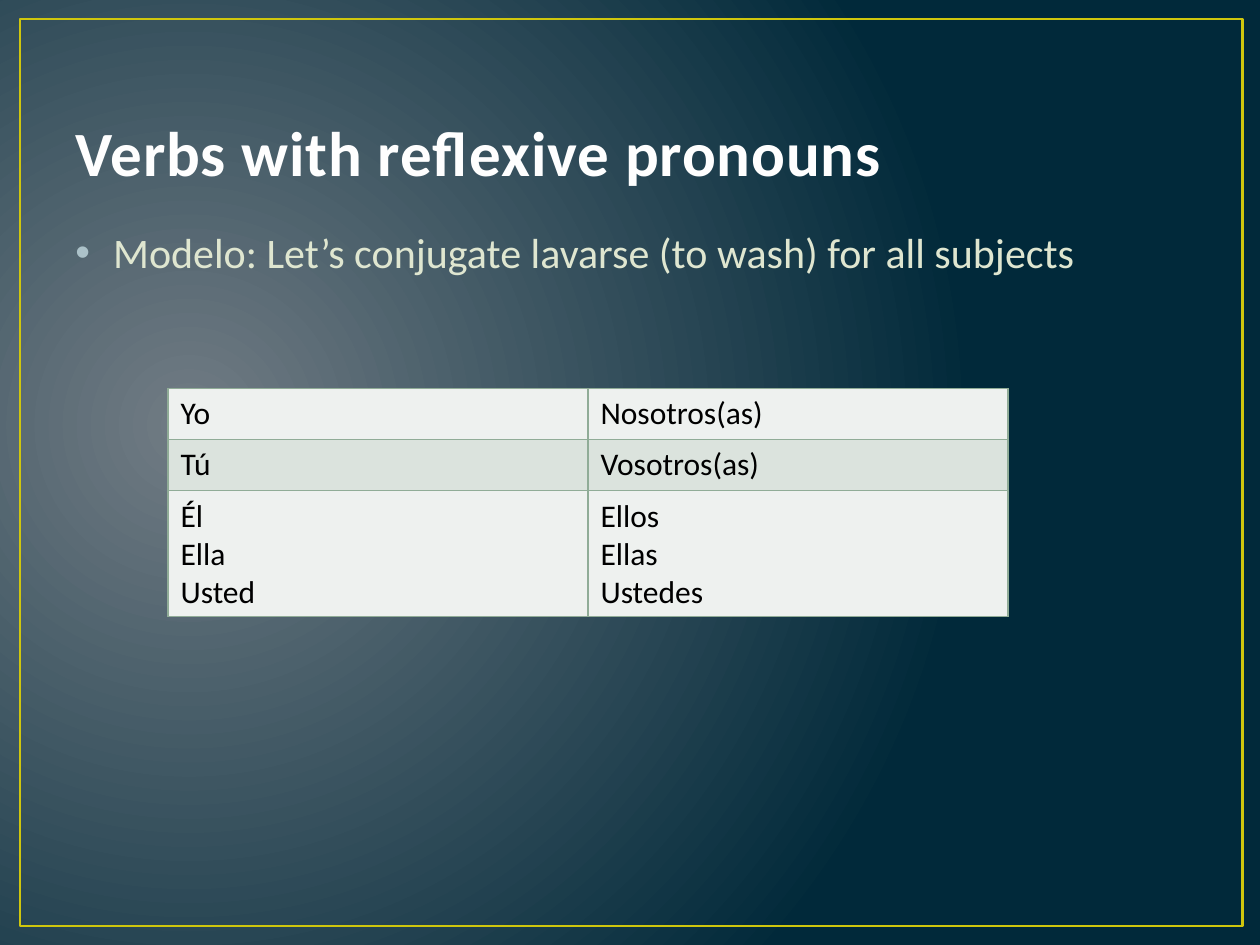
"""Build a Spanish grammar slide with a table of subject pronouns."""
from lxml.etree import SubElement
from pptx import Presentation
from pptx.dml.color import RGBColor
from pptx.enum.shapes import MSO_SHAPE
from pptx.enum.text import MSO_ANCHOR, PP_ALIGN
from pptx.oxml.ns import qn
from pptx.util import Pt


def color(value):
    return RGBColor.from_string(value)


def set_font(paragraph, size, value, bold=False):
    font = paragraph.font
    font.name, font.size, font.bold = "Calibri", Pt(size), bold
    font.color.rgb = color(value)


presentation = Presentation()
presentation.slide_width, presentation.slide_height = Pt(720), Pt(540)
slide = presentation.slides.add_slide(presentation.slide_layouts[5])

background = slide.background.fill
background.gradient()
for stop, value in zip(background.gradient_stops, ("717C84", "01293A")):
    stop.color.rgb = color(value)
gradient = slide.background._cSld.find(".//" + qn("a:gradFill"))
gradient.remove(gradient.find(qn("a:lin")))
circle = SubElement(gradient, qn("a:path"), path="circle")
SubElement(circle, qn("a:fillToRect"), l="15000", t="50000", r="85000", b="60000")

frame = slide.shapes.add_shape(MSO_SHAPE.RECTANGLE, Pt(11.5), Pt(10.8), Pt(698.5), Pt(518.4))
frame.shadow.inherit = False
frame.fill.background()
frame.line.color.rgb = color("CFC60D")
frame.line.width = Pt(1.5)

title = slide.shapes.title
title.left, title.top, title.width, title.height = Pt(36), Pt(21.6), Pt(648), Pt(90)
title.text_frame.text = "Verbs with reflexive pronouns"
title.text_frame.vertical_anchor = MSO_ANCHOR.BOTTOM
heading = title.text_frame.paragraphs[0]
heading.alignment = PP_ALIGN.LEFT
set_font(heading, 36, "FEFEFE", bold=True)
heading.runs[0].font._element.set("spc", "50")

body = slide.shapes.add_textbox(Pt(36), Pt(126), Pt(648), Pt(356.4))
body.text_frame.word_wrap = True
model = body.text_frame.paragraphs[0]
model.text = "Modelo: Let’s conjugate lavarse (to wash) for all subjects"
model.space_before = Pt(4.8)
set_font(model, 24, "DFE6D0")
properties = model._p.get_or_add_pPr()
properties.set("marL", str(Pt(21.6)))
properties.set("indent", str(Pt(-21.6)))
bullet_color = SubElement(properties, qn("a:buClr"))
SubElement(bullet_color, qn("a:srgbClr"), val="ACC2C9")
SubElement(properties, qn("a:buFont"), typeface="Arial")
SubElement(properties, qn("a:buChar"), char="•")
properties.append(properties.find(qn("a:defRPr")))

pronouns = [
    ("Yo", "Nosotros(as)"),
    ("Tú", "Vosotros(as)"),
    ("Él\nElla\nUsted", "Ellos\nEllas\nUstedes"),
]
row_heights = (29.2, 29.2, 72)
table = slide.shapes.add_table(3, 2, Pt(96), Pt(222), Pt(480), Pt(sum(row_heights))).table
table.first_row = False
for row_index, (texts, height) in enumerate(zip(pronouns, row_heights)):
    table.rows[row_index].height = Pt(height)
    for column_index, text in enumerate(texts):
        cell = table.cell(row_index, column_index)
        cell.text = text
        for paragraph in cell.text_frame.paragraphs:
            set_font(paragraph, 18, "000000")
        cell_properties = cell._tc.get_or_add_tcPr()
        for side in ("a:lnL", "a:lnR", "a:lnT", "a:lnB"):
            border = SubElement(cell_properties, qn(side), w=str(Pt(1)))
            border_fill = SubElement(border, qn("a:solidFill"))
            SubElement(border_fill, qn("a:srgbClr"), val="90AC97")
        cell.fill.solid()
        cell.fill.fore_color.rgb = color("DBE3DD" if row_index % 2 else "EEF1EF")

presentation.save("out.pptx")
